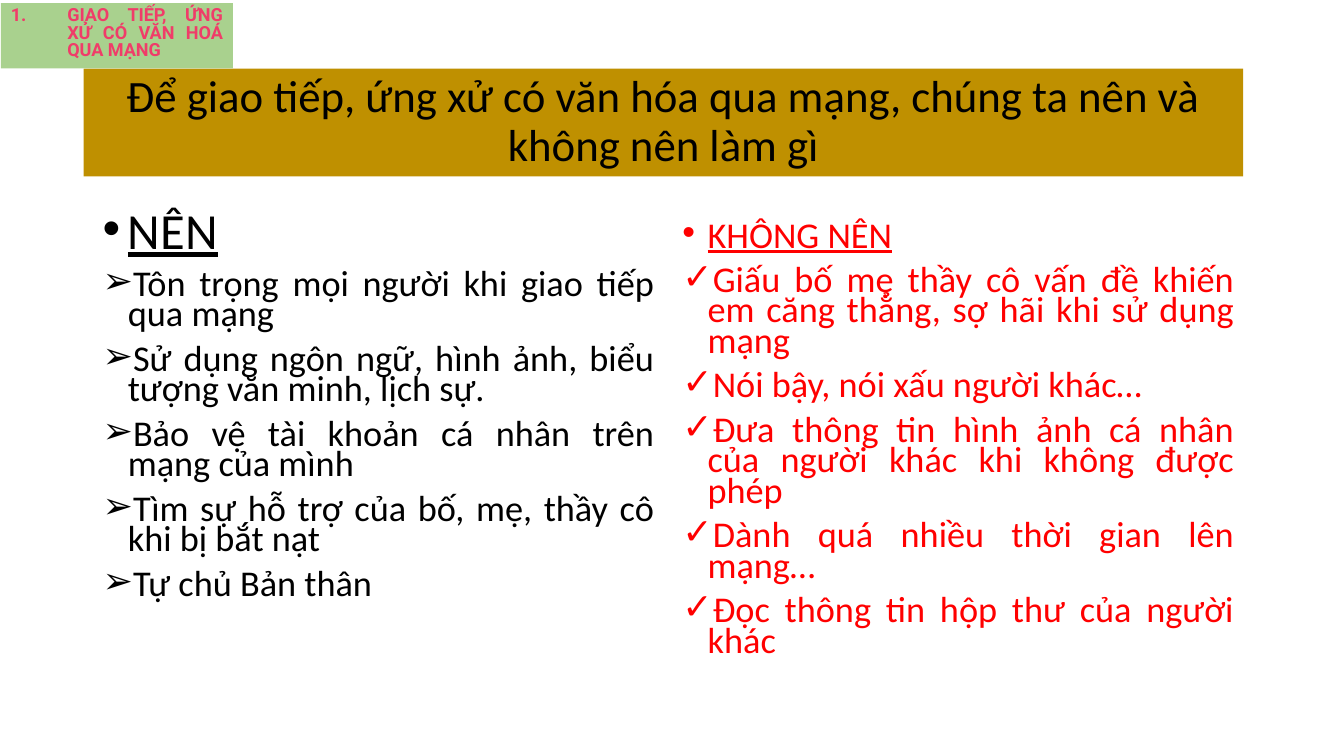
from dataclasses import dataclass

from lxml.etree import SubElement
from pptx import Presentation
from pptx.dml.color import RGBColor
from pptx.enum.shapes import MSO_SHAPE
from pptx.enum.text import MSO_ANCHOR, MSO_AUTO_SIZE, PP_ALIGN
from pptx.oxml.ns import qn
from pptx.util import Inches, Pt


@dataclass(frozen=True)
class Theme:
    black: str = "000000"
    red: str = "FF0000"
    pink: str = "F03C69"
    gold: str = "BF9000"
    green: str = "A9D18E"
    body_font: str = "Calibri"
    topic_font: str = "Roboto"
    title_size: float = 32
    heading_size: float = 36.1
    item_size: float = 25.9
    topic_size: float = 12.9


def write(paragraph, text, *, size, color, font, bold=False, underline=False,
          align=PP_ALIGN.JUSTIFY, spacing=0.7, before=0, indent=0,
          bullet=None, numbered=False):
    """Fill one paragraph with formatted text."""
    paragraph.alignment = align
    paragraph.line_spacing = spacing
    paragraph.space_before = Pt(before)
    run = paragraph.add_run()
    run.text = text
    run.font.name = font
    run.font.size = Pt(size)
    run.font.bold = bold
    run.font.underline = underline
    run.font.color.rgb = RGBColor.from_string(color)

    # Hanging indent and list marker
    properties = paragraph._p.get_or_add_pPr()
    properties.set("marL", str(Inches(indent)))
    properties.set("indent", str(-Inches(indent)))
    if numbered:
        SubElement(properties, qn("a:buAutoNum"), type="arabicPeriod")
    elif bullet:
        SubElement(properties, qn("a:buFont"), typeface="Arial")
        SubElement(properties, qn("a:buChar"), char=bullet)


class SlideBuilder:
    def __init__(self, presentation, theme):
        self.theme = theme
        self.slide = presentation.slides.add_slide(presentation.slide_layouts[5])

    def paint(self, shape, color):
        shape.fill.solid()
        shape.fill.fore_color.rgb = RGBColor.from_string(color)
        shape.line.fill.background()

    def title(self, text, left, top, width, height):
        banner = self.slide.shapes.title
        banner.left, banner.top = Inches(left), Inches(top)
        banner.width, banner.height = Inches(width), Inches(height)
        self.paint(banner, self.theme.gold)
        frame = banner.text_frame
        frame.word_wrap = True
        frame.vertical_anchor = MSO_ANCHOR.MIDDLE
        frame.auto_size = MSO_AUTO_SIZE.SHAPE_TO_FIT_TEXT
        write(frame.paragraphs[0], text, size=self.theme.title_size,
              color=self.theme.black, font=self.theme.body_font,
              align=PP_ALIGN.CENTER, spacing=0.9)

    def topic(self, text, left, top, width, height):
        label = self.slide.shapes.add_shape(
            MSO_SHAPE.RECTANGLE, Inches(left), Inches(top), Inches(width), Inches(height))
        label.shadow.inherit = False
        self.paint(label, self.theme.green)
        frame = label.text_frame
        frame.word_wrap = True
        frame.vertical_anchor = MSO_ANCHOR.TOP
        write(frame.paragraphs[0], text, size=self.theme.topic_size,
              color=self.theme.pink, font=self.theme.topic_font, bold=True,
              spacing=0.8, indent=0.56, numbered=True)

    def column(self, heading, items, left, top, *, heading_size, color, bullet):
        box = self.slide.shapes.add_textbox(
            Inches(left), Inches(top), Inches(5.67), Inches(4.76))
        frame = box.text_frame
        frame.word_wrap = True
        style = dict(color=color, font=self.theme.body_font, before=10, indent=0.25)
        write(frame.paragraphs[0], heading, size=heading_size, underline=True,
              bullet="•", **style)
        for item in items:
            write(frame.add_paragraph(), item, size=self.theme.item_size,
                  bullet=bullet, **style)


DOS = [
    "Tôn trọng mọi người khi giao tiếp qua mạng",
    "Sử dụng ngôn ngữ, hình ảnh, biểu tượng văn minh, lịch sự.",
    "Bảo vệ tài khoản cá nhân trên mạng của mình",
    "Tìm sự hỗ trợ của bố, mẹ, thầy cô khi bị bắt nạt",
    "Tự chủ Bản thân",
]
DONTS = [
    "Giấu bố mẹ thầy cô vấn đề khiến em căng thẳng, sợ hãi khi sử dụng mạng",
    "Nói bậy, nói xấu người khác…",
    "Đưa thông tin hình ảnh cá nhân của người khác khi không được phép",
    "Dành quá nhiều thời gian lên mạng…",
    "Đọc thông tin hộp thư của người khác",
]


def main():
    presentation = Presentation()
    presentation.slide_width = Inches(13.33)
    presentation.slide_height = Inches(7.5)
    theme = Theme()
    builder = SlideBuilder(presentation, theme)

    # Two lists: what to do and what to avoid
    builder.column("NÊN", DOS, 0.92, 2.09, heading_size=theme.heading_size,
                   color=theme.black, bullet="➢")
    builder.column("KHÔNG NÊN", DONTS, 6.67, 2.17, heading_size=theme.item_size,
                   color=theme.red, bullet="✓")

    # Title banner and topic label
    builder.title("Để giao tiếp, ứng xử có văn hóa qua mạng, "
                  "chúng ta nên và không nên làm gì", 0.83, 0.68, 11.5, 1.07)
    builder.topic("GIAO TIẾP, ỨNG XỬ CÓ VĂN HOÁ QUA MẠNG", 0.01, 0.03, 2.3, 0.65)

    presentation.save("out.pptx")


if __name__ == "__main__":
    main()
